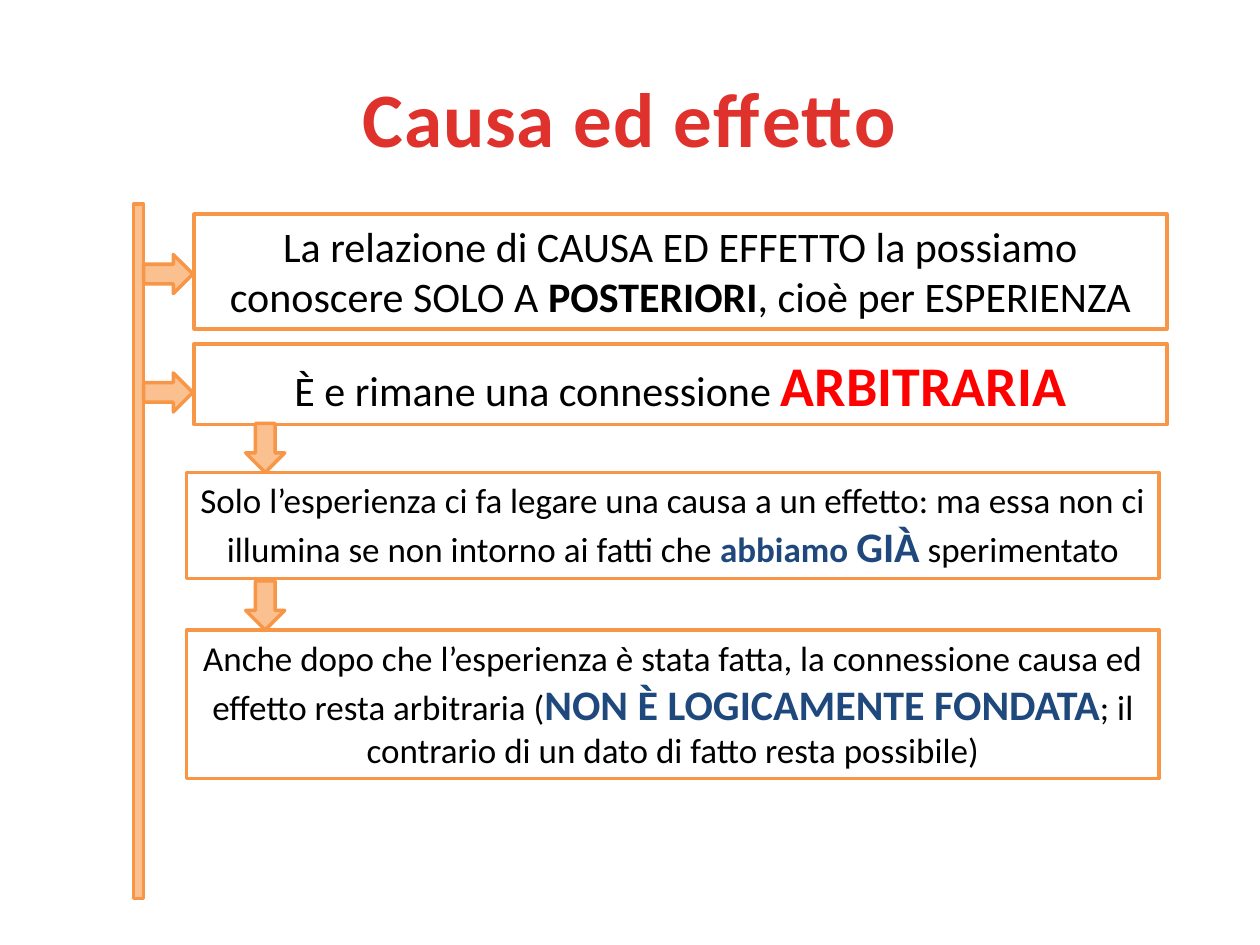
import pptx
import pptx.dml.color
import pptx.enum.shapes
import pptx.enum.text
import pptx.util

Inches = pptx.util.Inches
Pt = pptx.util.Pt
RGBColor = pptx.dml.color.RGBColor
MSO_SHAPE = pptx.enum.shapes.MSO_SHAPE
MSO_ANCHOR = pptx.enum.text.MSO_ANCHOR

TITLE_RED = RGBColor(0xE0, 0x32, 0x2D)
PEACH = RGBColor(0xFA, 0xC0, 0x90)
ORANGE = RGBColor(0xF7, 0x96, 0x46)
WHITE = RGBColor(0xFF, 0xFF, 0xFF)
BLACK = RGBColor(0, 0, 0)
RED = RGBColor(0xFF, 0, 0)
NAVY = RGBColor(0x1F, 0x49, 0x7D)

TITLE_ONLY = 5
BOX_WIDTH = 7.72
ARROW_WIDTH, ARROW_HEIGHT = 0.39, 0.31


def add_run(paragraph, text, size=24, color=BLACK, bold=False, spacing=None):
    """Append formatted text; spacing is the letter spacing in points."""
    run = paragraph.add_run()
    run.text = text
    run.font.name = "Calibri"
    run.font.size = Pt(size)
    run.font.bold = bold
    run.font.color.rgb = color
    if spacing is not None:
        run._r.get_or_add_rPr().set("spc", str(int(spacing * 100)))


class ConceptSlide:
    def __init__(self, presentation):
        self.slide = presentation.slides.add_slide(
            presentation.slide_layouts[TITLE_ONLY])

    def title(self, text):
        heading = self.slide.shapes.title
        heading.left, heading.top = Inches(0.5), Inches(0.3)
        heading.width, heading.height = Inches(9), Inches(1.25)
        heading.text_frame.vertical_anchor = MSO_ANCHOR.MIDDLE
        paragraph = heading.text_frame.paragraphs[0]
        paragraph.alignment = pptx.enum.text.PP_ALIGN.CENTER
        add_run(paragraph, text, size=44, color=TITLE_RED, bold=True, spacing=0.5)

    def outlined(self, kind, left, top, width, height, fill=PEACH):
        shape = self.slide.shapes.add_shape(
            kind, Inches(left), Inches(top), Inches(width), Inches(height))
        shape.shadow.inherit = False
        shape.fill.solid()
        shape.fill.fore_color.rgb = fill
        shape.line.color.rgb = ORANGE
        shape.line.width = Pt(2)
        return shape

    def arrow(self, left, top, rotation=0):
        arrow = self.outlined(MSO_SHAPE.RIGHT_ARROW, left, top,
                              ARROW_WIDTH, ARROW_HEIGHT)
        arrow.rotation = rotation

    def statement(self, left, top, height, parts):
        """Draw a white box; parts are (text, format) pairs."""
        box = self.outlined(MSO_SHAPE.RECTANGLE, left, top, BOX_WIDTH, height, WHITE)
        frame = box.text_frame
        frame.word_wrap = True
        frame.auto_size = pptx.enum.text.MSO_AUTO_SIZE.SHAPE_TO_FIT_TEXT
        frame.vertical_anchor = MSO_ANCHOR.TOP
        paragraph = frame.paragraphs[0]
        paragraph.alignment = pptx.enum.text.PP_ALIGN.CENTER
        for text, style in parts:
            add_run(paragraph, text, **style)


def main():
    presentation = pptx.Presentation()
    presentation.slide_width = Inches(10)
    presentation.slide_height = Inches(7.5)

    body = {"size": 20}
    navy_bold = {"color": NAVY, "bold": True}
    main_left, detail_left = 1.54, 1.48
    # Each step: arrow (left, top, rotation), box (left, top, height), text
    steps = [
        ((1.14, 2.02, 0), (main_left, 1.7, 0.91), [
            ("La relazione di CAUSA ED EFFETTO la possiamo conoscere SOLO A ", {}),
            ("POSTERIORI", {"bold": True}),
            (", cioè per ESPERIENZA", {})]),
        ((1.14, 2.96, 0), (main_left, 2.73, 0.64), [
            ("È e rimane una connessione ", {}),
            ("ARBITRARIA", {"size": 32, "color": RED, "bold": True})]),
        ((1.91, 3.4, 90), (detail_left, 3.75, 0.84), [
            ("Solo l’esperienza ci fa legare una causa a un effetto: ma essa "
             "non ci illumina se non intorno ai fatti che ", body),
            ("abbiamo ", {**navy_bold, **body}),
            ("GIÀ", navy_bold),
            (" ", {**navy_bold, **body}),
            ("sperimentato", body)]),
        ((1.91, 4.65, 90), (detail_left, 5, 1.18), [
            ("Anche dopo che l’esperienza è stata fatta, la connessione causa "
             "ed effetto resta arbitraria (", body),
            ("NON È LOGICAMENTE FONDATA", navy_bold),
            ("; il contrario di un dato di fatto resta possibile)", body)]),
    ]

    concept = ConceptSlide(presentation)
    concept.title("Causa ed effetto")
    concept.outlined(MSO_SHAPE.RECTANGLE, 1.06, 1.62, 0.08, 5.51)
    for arrow, box, parts in steps:
        concept.arrow(*arrow)
        concept.statement(*box, parts)

    presentation.save("out.pptx")


if __name__ == "__main__":
    main()
